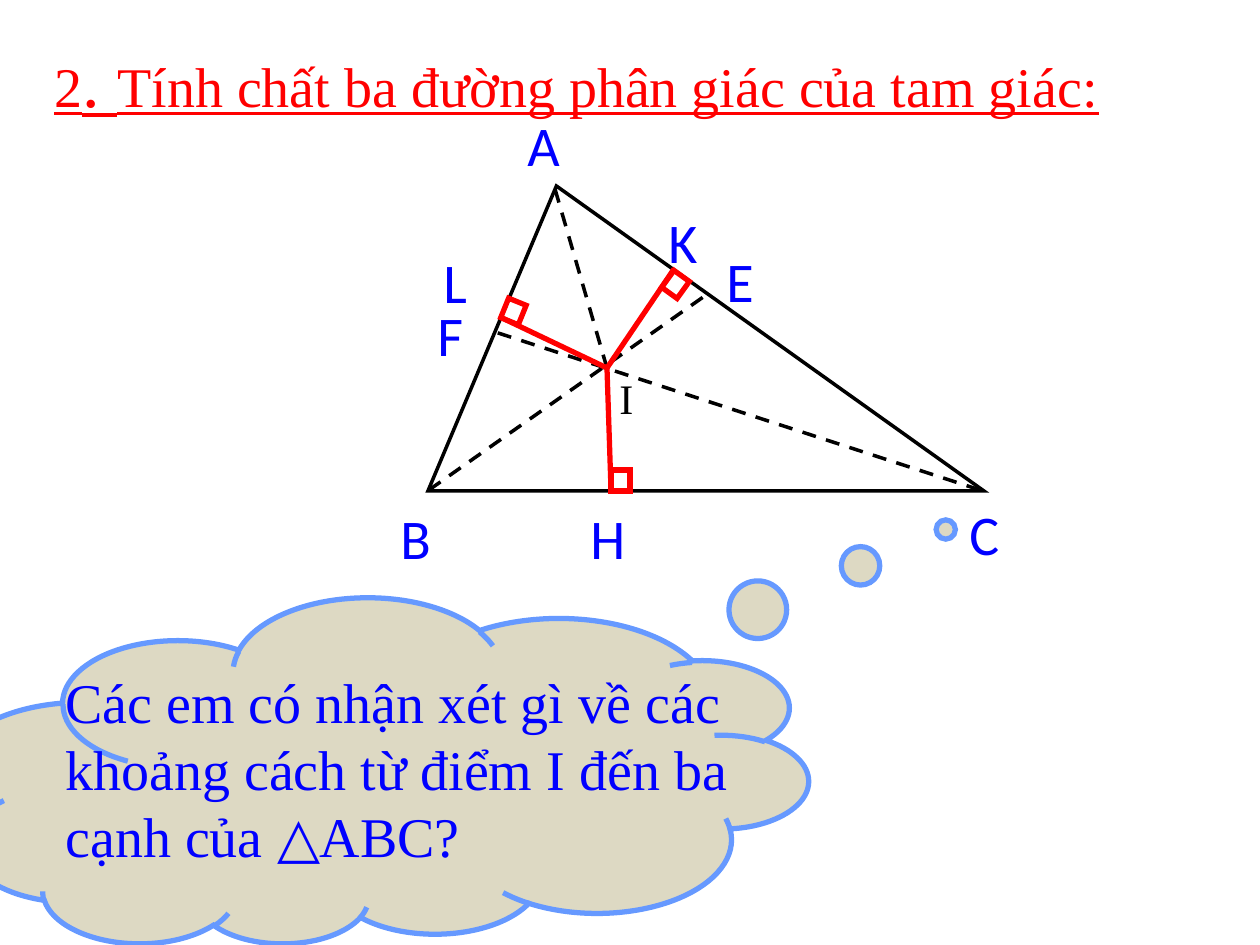
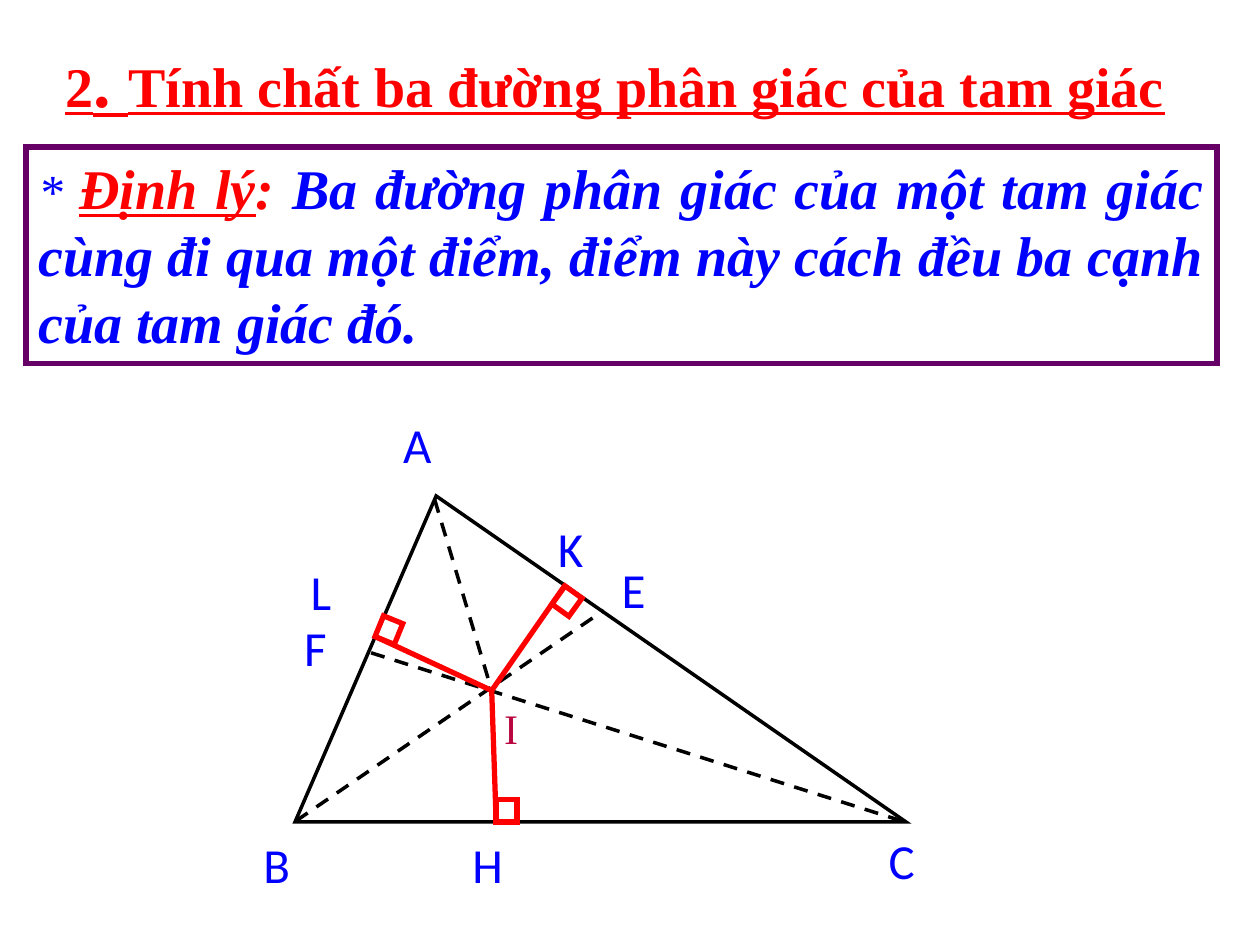
from dataclasses import dataclass
from lxml.etree import SubElement
from pptx import Presentation
from pptx.dml.color import RGBColor
from pptx.enum.dml import MSO_LINE
from pptx.enum.shapes import MSO_CONNECTOR, MSO_SHAPE as Shape
from pptx.enum.text import MSO_ANCHOR as Anchor, PP_ALIGN as Align
from pptx.oxml.ns import qn
from pptx.util import Emu, Pt

PX = 914400 / 126


@dataclass(frozen=True)
class Theme:
    red: str = "FF0000"
    blue: str = "0000FF"
    black: str = "000000"
    crimson: str = "BA063E"
    purple: str = "660066"
    cloud: str = "DDD9C3"
    cloud_edge: str = "6699FF"
    serif: str = "Times New Roman"
    sans: str = "Calibri"
    body: int = 32
    dot: int = 40
    small: int = 28
    incentre: int = 24
    thin: int = 2
    thick: int = 3


T = Theme()

# Triangle figure, in px from the corner of its 556 x 305 frame
FRAME = (556, 305)
POINTS = {
    "A": (127, 3), "B": (1, 304), "C": (552, 304), "E": (281, 107), "F": (67, 146),
    "H": (183, 302), "I": (179, 182), "K": (246, 83), "L": (72, 131),
}
BISECTORS = ("AI", "BE", "CF")
DISTANCES = ("IK", "HI", "LI")
RIGHT_ANGLES = (((183, 284), 0), ((238, 88), 35.8), ((76, 115), 22.1))
ANGLE_SIZE = (19, 21)
LABELS = {
    "A": (87, -82), "B": (-40, 311), "C": (529, 307), "K": (228, 15), "F": (-3, 108),
    "H": (150, 311), "E": (286, 54), "L": (3, 55),
}
INCENTRE_LABEL = (179, 180)
LABEL_SIZE = (72, 81)


def emu(*lengths):
    return [Emu(round(length * PX)) for length in lengths]


def style_line(line, color, width, dash=None):
    line.color.rgb = RGBColor.from_string(color)
    for key, value in {"width": Pt(width), "dash_style": dash}.items():
        setattr(line, key, value)


def write(frame, runs, align=Align.LEFT):
    """Fill a text frame from (text, colour, format) runs."""
    for key, value in {"word_wrap": True, "vertical_anchor": Anchor.TOP}.items():
        setattr(frame, key, value)
    paragraph = frame.paragraphs[0]
    paragraph.alignment = align
    for text, color, changes in runs:
        run = paragraph.add_run()
        run.text = text
        font_format = {"name": T.serif, "size": T.body} | changes
        font_format["size"] = Pt(font_format["size"])
        for key, value in font_format.items():
            setattr(run.font, key, value)
        run.font.color.rgb = RGBColor.from_string(color)


def add_text(shapes, box, runs):
    write(shapes.add_textbox(*emu(*box)).text_frame, runs)


def add_outline(shapes, kind, box, color, width, fill=None, rotation=0, adjustments=()):
    shape = shapes.add_shape(kind, *emu(*box))
    shape.shadow.inherit = False
    shape.rotation = rotation
    for index, value in enumerate(adjustments):
        shape.adjustments[index] = value
    if fill:
        shape.fill.solid()
        shape.fill.fore_color.rgb = RGBColor.from_string(fill)
    else:
        shape.fill.background()
    style_line(shape.line, color, width)
    SubElement(shape.line._get_or_add_ln(), qn("a:miter"), lim="800000")
    return shape


def add_segment(shapes, start, end, color, width, dash=None):
    segment = shapes.add_connector(MSO_CONNECTOR.STRAIGHT, *emu(*start, *end))
    style_line(segment.line, color, width, dash)
    SubElement(segment._element.spPr, qn("a:effectLst"))


def add_title(slide, left, width, text, bold):
    style = {"underline": True, "bold": bold}
    add_text(slide.shapes, (left, 31, width, 97), [
        ("2", T.red, style),
        (". ", T.red, style | {"size": T.dot}),
        (text, T.red, style),
    ])


def add_triangle(slide, frame, label_size, incentre_color, incentre_drop=0):
    """Draw triangle ABC with its bisectors and the distances from I."""
    left, top, width, height = frame
    scale_x, scale_y = width / FRAME[0], height / FRAME[1]
    shapes = slide.shapes.add_group_shape().shapes

    def place(point):
        return left + point[0] * scale_x, top + point[1] * scale_y

    def box(corner, size):
        return *place(corner), size[0] * scale_x, size[1] * scale_y

    add_outline(shapes, Shape.ISOSCELES_TRIANGLE, frame, T.black, T.thin,
                adjustments=[0.231])
    for start, end in BISECTORS:
        add_segment(shapes, place(POINTS[start]), place(POINTS[end]),
                    T.black, T.thin, MSO_LINE.DASH)
    for start, end in DISTANCES:
        add_segment(shapes, place(POINTS[start]), place(POINTS[end]), T.red, T.thick)
    for corner, rotation in RIGHT_ANGLES:
        add_outline(shapes, Shape.RECTANGLE, box(corner, ANGLE_SIZE), T.red, T.thick,
                    rotation=rotation)

    # Point names
    for name, corner in LABELS.items():
        add_text(shapes, box(corner, LABEL_SIZE),
                 [(name, T.blue, {"name": T.sans, "size": label_size})])
    x, y, *size = box(INCENTRE_LABEL, LABEL_SIZE)
    add_text(shapes, (x, y + incentre_drop, *size),
             [("I", incentre_color, {"size": T.incentre})])


def add_question(slide):
    add_outline(slide.shapes, Shape.CLOUD_CALLOUT, (-53, 599, 861, 346), T.cloud_edge,
                T.thick, T.cloud, 180, (-0.66, 0.701))
    add_text(slide.shapes, (53, 661, 703, 255), [
        ("Các em có nhận xét gì về các khoảng cách từ điểm I đến ba cạnh của △ABC?",
         T.blue, {}),
    ])


def add_theorem(slide):
    theorem = add_outline(slide.shapes, Shape.RECTANGLE, (26, 147, 1191, 217),
                          T.purple, T.thick)
    strong = {"italic": True, "bold": True}
    write(theorem.text_frame, [
        ("* ", T.blue, {"size": T.small, "italic": True}),
        ("Định lý", T.red, strong | {"underline": True}),
        (": ", T.red, strong),
        ("Ba đường phân giác của một tam giác cùng đi qua một điểm, "
         "điểm này cách đều ba cạnh của tam giác đó.", T.blue, strong),
    ], Align.JUSTIFY)


def main():
    deck = Presentation()
    deck.slide_width, deck.slide_height = emu(1260, 945)
    blank = deck.slide_layouts[6]
    heading = "Tính chất ba đường phân giác của tam giác"

    # Question about the distances
    question = deck.slides.add_slide(blank)
    add_triangle(question, (428, 186, 556, 305), T.body, T.black)
    add_title(question, 42, 1166, heading + ":", False)
    add_question(question)

    # Theorem
    theorem = deck.slides.add_slide(blank)
    add_theorem(theorem)
    add_triangle(theorem, (295, 496, 611, 326), T.small, T.crimson, 8)
    add_title(theorem, 53, 1134, heading, True)

    deck.save("out.pptx")


if __name__ == "__main__":
    main()
